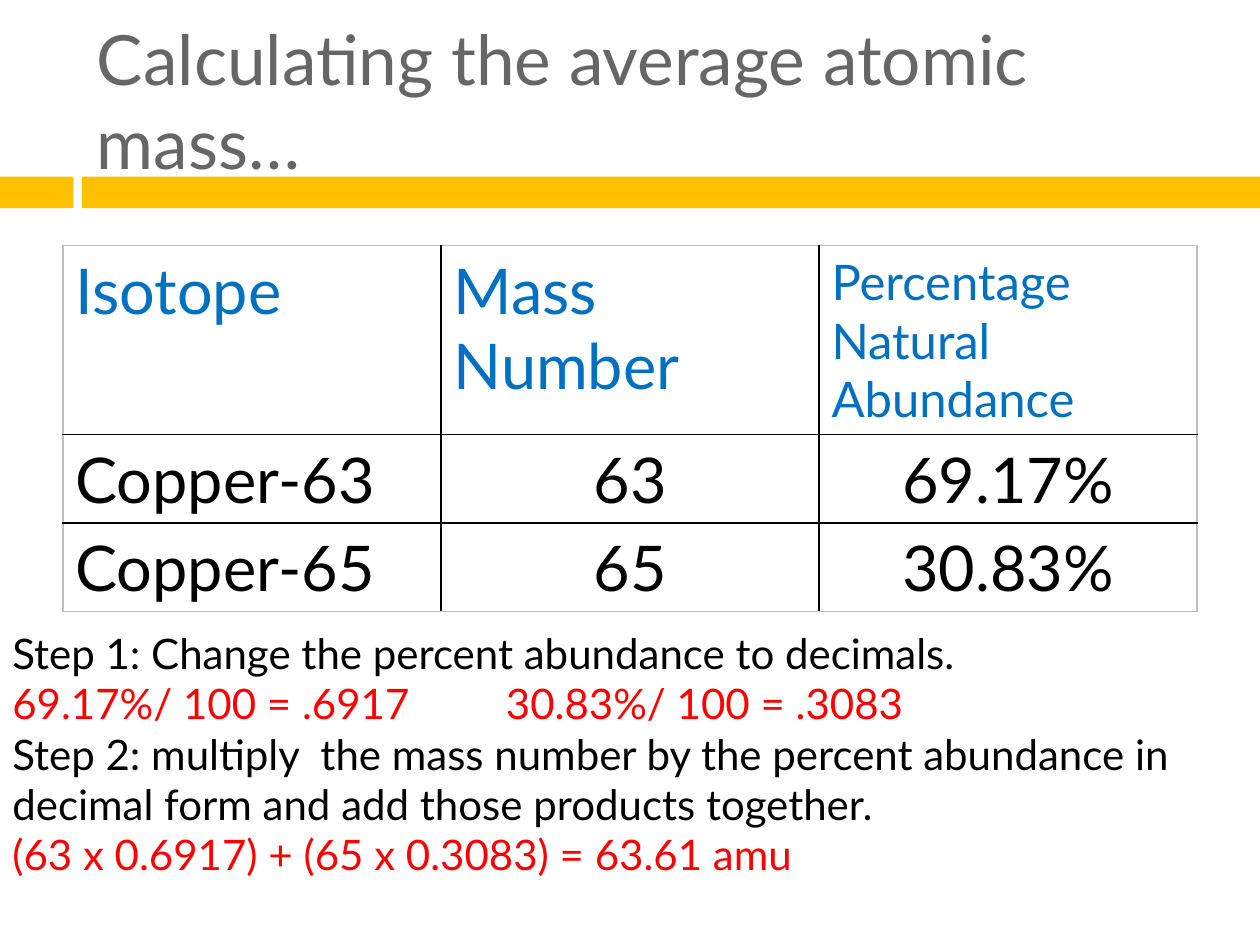
from lxml.etree import SubElement
from pptx import Presentation
from pptx.dml.color import RGBColor
from pptx.enum.shapes import MSO_SHAPE
from pptx.enum.text import MSO_ANCHOR, MSO_AUTO_SIZE, PP_ALIGN
from pptx.oxml.ns import qn
from pptx.util import Cm, Pt

AMBER, GREY, BLUE = "FFC000", "666666", "0070C0"
BLACK, RED, EDGE = "000000", "FF0000", "BFBFBF"


def color(hex_code):
    return RGBColor.from_string(hex_code)


def write(paragraph, text, size=24, ink=BLACK, align=PP_ALIGN.LEFT, font="Lato"):
    paragraph.alignment = align
    run = paragraph.add_run()
    run.text = text
    run.font.name = font
    run.font.size = Pt(size)
    run.font.bold = False
    run.font.color.rgb = color(ink)


def add_tab_stop(paragraph, position):
    tabs = SubElement(paragraph._p.get_or_add_pPr(), qn("a:tabLst"))
    SubElement(tabs, qn("a:tab"), pos=str(position), algn="l")


def set_borders(cell, edge_inks):
    """Draw the left, right, top and bottom borders, ahead of the cell's fill."""
    properties = cell._tc.get_or_add_tcPr()
    for index, (side, ink) in enumerate(zip("LRTB", edge_inks)):
        line = SubElement(properties, qn(f"a:ln{side}"), w=str(Pt(1)))
        fill = SubElement(line, qn("a:solidFill"))
        SubElement(fill, qn("a:srgbClr"), val=ink)
        properties.insert(index, line)


class SlideBuilder:
    """Holds the current slide and the style of its elements."""

    def __init__(self, slide):
        self.slide = slide

    def bar(self, left, top, width, height):
        band = self.slide.shapes.add_shape(
            MSO_SHAPE.RECTANGLE, Cm(left), Cm(top), Cm(width), Cm(height))
        band.shadow.inherit = False
        band.fill.solid()
        band.fill.fore_color.rgb = color(AMBER)
        band.line.fill.background()

    def title(self, text, left, top, width, height):
        heading = self.slide.shapes.title
        heading.left, heading.top = Cm(left), Cm(top)
        heading.width, heading.height = Cm(width), Cm(height)
        frame = heading.text_frame
        frame.auto_size = MSO_AUTO_SIZE.NONE
        frame.vertical_anchor = MSO_ANCHOR.MIDDLE
        write(frame.paragraphs[0], text, size=39.6, ink=GREY)

    def table(self, rows, row_heights, left, top, width):
        row_count, column_count = len(rows), len(rows[0])
        grid = self.slide.shapes.add_table(
            row_count, column_count, Cm(left), Cm(top),
            Cm(width), Cm(sum(row_heights))).table
        grid.first_row = grid.horz_banding = False
        for r, (entries, height) in enumerate(zip(rows, row_heights)):
            grid.rows[r].height = Cm(height)
            for c, (text, style) in enumerate(entries):
                cell = grid.cell(r, c)
                cell.fill.background()
                write(cell.text_frame.paragraphs[0], text, **style)
                on_edge = (c == 0, c == column_count - 1,
                           r == 0, r == row_count - 1)
                set_borders(cell, [EDGE if outer else BLACK for outer in on_edge])

    def steps(self, lines, left, top, width, height, tab):
        frame = self.slide.shapes.add_textbox(
            Cm(left), Cm(top), Cm(width), Cm(height)).text_frame
        frame.word_wrap = True
        for index, (text, ink) in enumerate(lines):
            paragraph = frame.add_paragraph() if index else frame.paragraphs[0]
            write(paragraph, text, ink=ink)
            if "\t" in text:
                add_tab_stop(paragraph, Cm(tab))


def main():
    deck = Presentation()
    deck.slide_width, deck.slide_height = Cm(25.4), Cm(19.05)
    title_only = deck.slide_layouts[5]
    builder = SlideBuilder(deck.slides.add_slide(title_only))

    for left, width in ((0, 1.48), (1.65, 23.75)):
        builder.bar(left, 3.56, width, 0.64)
    builder.title("Calculating the average atomic mass…", 1.7, 0.64, 22.66, 2.74)

    header = {"size": 36, "ink": BLUE}
    name = {"size": 36}
    value = {"size": 36, "align": PP_ALIGN.CENTER}
    isotopes = [("Copper-63", "63", "69.17%"), ("Copper-65", "65", "30.83%")]
    rows = [[("Isotope", header), ("Mass Number", header),
             ("Percentage Natural Abundance", {"size": 28, "ink": BLUE})]]
    rows += [list(zip(isotope, (name, value, value))) for isotope in isotopes]
    builder.table(rows, (3.81, 1.78, 1.78), 1.27, 4.95, 22.86)

    builder.steps([
        ("Step 1: Change the percent abundance to decimals.", BLACK),
        ("69.17%/ 100 = .6917\t30.83%/ 100 = .3083", RED),
        ("Step 2: multiply  the mass number by the percent abundance in "
         "decimal form and add those products together.", BLACK),
        ("(63 x 0.6917) + (65 x 0.3083) = 63.61 amu", RED),
    ], 0, 12.52, 25.4, 7.19, tab=9.95)

    deck.save("out.pptx")


if __name__ == "__main__":
    main()
